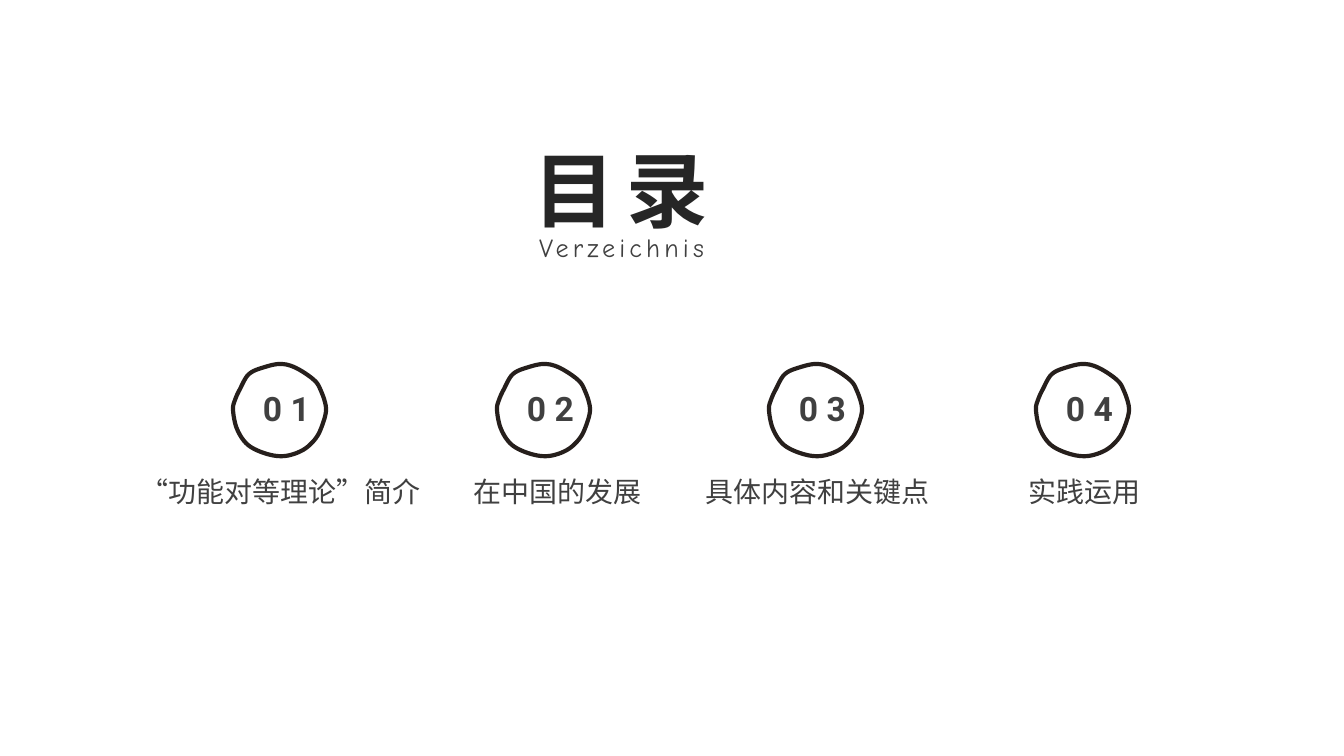
from pptx import Presentation
from pptx.dml.color import RGBColor
from pptx.enum.lang import MSO_LANGUAGE_ID
from pptx.enum.text import MSO_ANCHOR, MSO_AUTO_SIZE, PP_ALIGN
from pptx.oxml.ns import qn
from pptx.util import Emu, Pt
from lxml.etree import SubElement

EMU_PER_PX = 914400 / 134.4

INK = RGBColor(0x26, 0x26, 0x26)
GREY = RGBColor(0x40, 0x40, 0x40)
RING = RGBColor(0x26, 0x1F, 0x1C)

CJK = "Noto Sans CJK SC"

# Hand-drawn ring, clockwise from its left side, in px
RING_POINTS = [
    (0, 47), (2, 37), (7, 26), (16, 11), (32, 4), (48, 1),
    (63, 5), (81, 17), (88, 28), (93, 45), (90, 60), (83, 75),
    (70, 87), (52, 93), (34, 91), (15, 82), (4, 66),
]
RING_TOP = 363
STEPS = 6

# Label, ring left, label left
CHAPTERS = [
    ("“功能对等理论”简介", 233, 101),
    ("在中国的发展", 497, 378),
    ("具体内容和关键点", 769, 638),
    ("实践运用", 1036, 905),
]


def px(n):
    return Emu(round(n * EMU_PER_PX))


def format_text(sp, text, font, size, color, bold=False, spacing=0,
                align=PP_ALIGN.CENTER, wrap=True):
    tf = sp.text_frame
    tf.text = text
    tf.word_wrap = wrap
    tf.auto_size = MSO_AUTO_SIZE.NONE
    tf.vertical_anchor = MSO_ANCHOR.TOP
    tf.margin_left = tf.margin_right = px(11)
    tf.margin_top = tf.margin_bottom = px(5)
    p = tf.paragraphs[0]
    p.alignment = align
    r = p.runs[0]
    r.font.size = Pt(size)
    r.font.bold = bold
    r.font.color.rgb = color
    r.font.name = font
    r.font.language_id = MSO_LANGUAGE_ID.SIMPLIFIED_CHINESE
    # East Asian font and letter spacing
    rPr = r.font._element
    SubElement(rPr, qn("a:ea")).set("typeface", CJK)
    if spacing:
        rPr.set("spc", str(round(spacing * 100)))


def add_text(s, left, top, width, height, text, font, size, **style):
    sp = s.shapes.add_textbox(px(left), px(top), px(width), px(height))
    format_text(sp, text, font, size, GREY, **style)


def smooth_outline(points):
    """Sample a closed Catmull-Rom curve through the points."""
    n = len(points)
    outline = []
    for i in range(n):
        quad = [points[(i + k) % n] for k in (-1, 0, 1, 2)]
        for step in range(STEPS):
            t = step / STEPS
            outline.append(tuple(
                b + 0.5 * t * (c - a + t * (2 * a - 5 * b + 4 * c - d
                                            + t * (3 * (b - c) + d - a)))
                for a, b, c, d in zip(*quad)))
    return outline


def add_ring(s, left, top):
    outline = [(px(left + x), px(top + y))
               for x, y in smooth_outline(RING_POINTS)]
    builder = s.shapes.build_freeform(*outline[0])
    builder.add_line_segments(outline[1:], close=True)
    sp = builder.convert_to_shape()
    sp.shadow.inherit = False
    sp.fill.background()
    sp.line.color.rgb = RING
    sp.line.width = Pt(2.25)


def add_chapter(s, number, label, ring_left, label_left):
    add_ring(s, ring_left, RING_TOP)
    add_text(s, ring_left + 11, 383, 85, 51, f"{number:02d}", "Roboto", 18,
             bold=True, spacing=4.5)
    add_text(s, label_left, 470, 360, 44, label, CJK, 15)


def main():
    prs = Presentation()
    prs.slide_width, prs.slide_height = px(1344), px(756)
    s = prs.slides.add_slide(prs.slide_layouts[5])

    # Heading
    title = s.shapes.title
    title.left, title.top = px(513), px(134)
    title.width, title.height = px(216), px(110)
    format_text(title, "目录", "Roboto", 44, INK, bold=True, spacing=6)
    add_text(s, 528, 226, 208, 42, "Verzeichnis", "Comic Neue", 14,
             spacing=2.2, align=PP_ALIGN.LEFT, wrap=False)

    # Chapters
    for number, chapter in enumerate(CHAPTERS, start=1):
        add_chapter(s, number, *chapter)

    prs.save("out.pptx")


if __name__ == "__main__":
    main()
